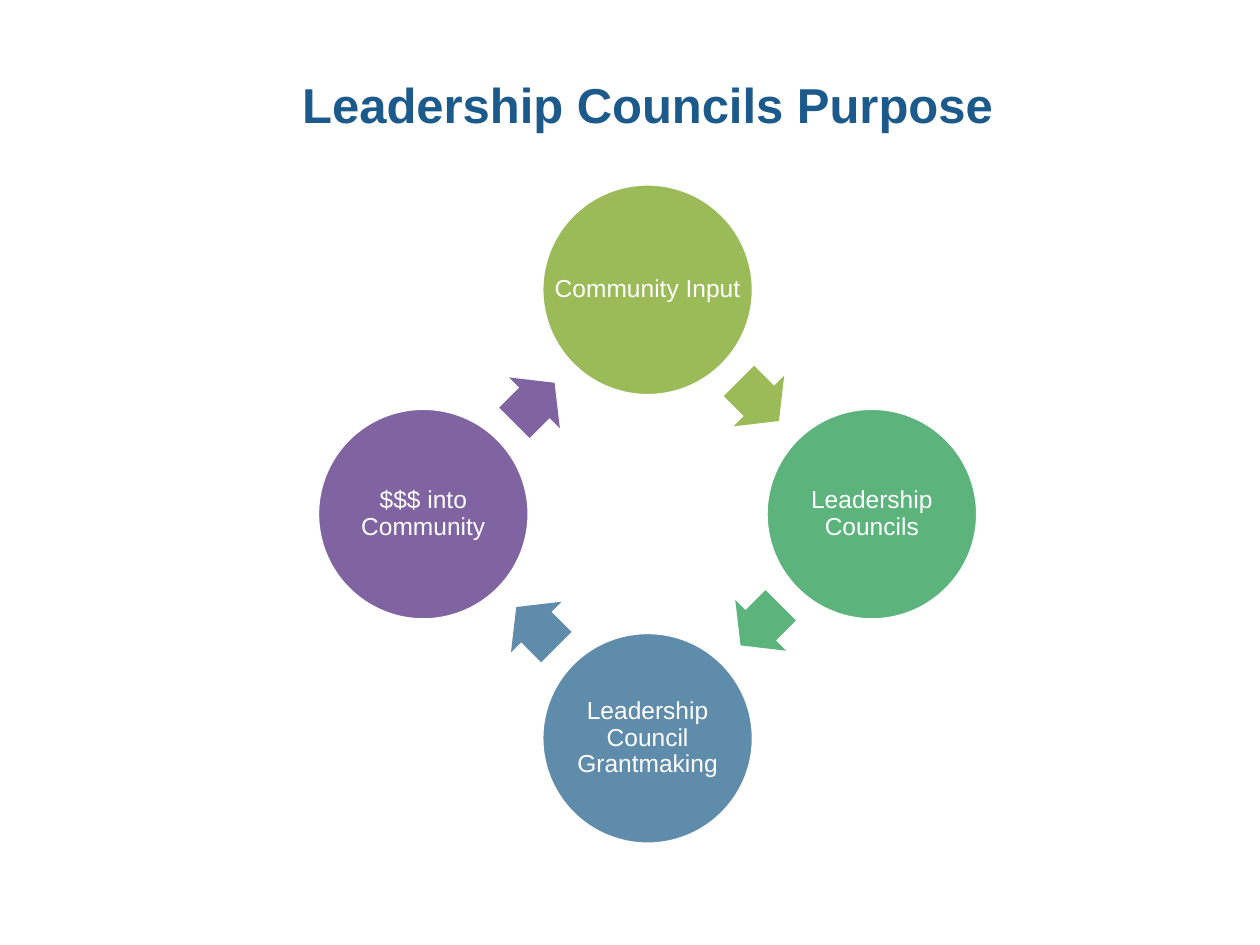
import math

from pptx import Presentation
from pptx.dml.color import RGBColor
from pptx.enum.shapes import MSO_SHAPE
from pptx.enum.text import MSO_ANCHOR, PP_ALIGN
from pptx.util import Pt

OVAL = MSO_SHAPE.OVAL
RIGHT_ARROW = MSO_SHAPE.RIGHT_ARROW
MIDDLE = MSO_ANCHOR.MIDDLE
CENTER = PP_ALIGN.CENTER

FONT = "Arial"
WHITE = RGBColor(0xFF, 0xFF, 0xFF)
TITLE_BLUE = RGBColor(0x1C, 0x5A, 0x8C)
GREEN = RGBColor(0x9B, 0xBB, 0x59)
TEAL = RGBColor(0x5C, 0xB3, 0x7C)
BLUE = RGBColor(0x60, 0x8C, 0xAB)
PURPLE = RGBColor(0x80, 0x64, 0xA2)

TITLE_ONLY = 5
STEPS = [
    ("Community Input", GREEN),
    ("Leadership Councils", TEAL),
    ("Leadership Council Grantmaking", BLUE),
    ("$$$ into Community", PURPLE),
]
CIRCLE_SIZE = 121
ARROW_LENGTH, ARROW_WIDTH = 32.4, 41
ARROW_SETBACK = 0.7


def centered_box(x, y, width, height):
    """Return left, top, width and height of a box around a centre point."""
    return Pt(x - width / 2), Pt(y - height / 2), Pt(width), Pt(height)


def style_text(frame, size, color, bold=False):
    frame.word_wrap = True
    frame.vertical_anchor = MIDDLE
    for para in frame.paragraphs:
        para.alignment = CENTER
        for span in para.runs:
            span.font.name = FONT
            span.font.size = Pt(size)
            span.font.bold = bold
            span.font.color.rgb = color


def add_title(page, text, left, top, width, height):
    title = page.shapes.title
    title.left, title.top = Pt(left), Pt(top)
    title.width, title.height = Pt(width), Pt(height)
    title.text_frame.text = text
    style_text(title.text_frame, 28, TITLE_BLUE, bold=True)


def add_filled_shape(page, kind, bounds, color):
    shape = page.shapes.add_shape(kind, *bounds)
    shape.shadow.inherit = False
    shape.fill.solid()
    shape.fill.fore_color.rgb = color
    return shape


def add_circle(page, x, y, label, color):
    """Draw a circle and a label that may use its full width."""
    bounds = centered_box(x, y, CIRCLE_SIZE, CIRCLE_SIZE)
    circle = add_filled_shape(page, OVAL, bounds, color)
    circle.line.color.rgb = WHITE
    circle.line.width = Pt(2)

    box = page.shapes.add_textbox(*bounds)
    frame = box.text_frame
    frame.margin_left = frame.margin_right = Pt(1.4)
    frame.margin_top = frame.margin_bottom = Pt(1.4)
    frame.text = label
    style_text(frame, 14, WHITE)
    frame.paragraphs[0].line_spacing = 0.9


def add_arrow(page, x, y, rotation, color):
    bounds = centered_box(x, y, ARROW_LENGTH, ARROW_WIDTH)
    arrow = add_filled_shape(page, RIGHT_ARROW, bounds, color)
    arrow.line.fill.background()
    arrow.adjustments[0] = 0.6
    arrow.adjustments[1] = 0.5
    arrow.rotation = rotation


def add_cycle(page, left, top, size):
    """Place the steps clockwise from the top, each followed by an arrow."""
    orbit = (size - CIRCLE_SIZE) / 2
    center_x, center_y = left + size / 2, top + size / 2
    turn = 360 / len(STEPS)
    arrow_orbit = orbit * math.cos(math.radians(turn / 2))
    for index, (label, color) in enumerate(STEPS):
        angle = math.radians(index * turn - 90)
        add_circle(page, center_x + orbit * math.cos(angle),
                   center_y + orbit * math.sin(angle), label, color)

        rotation = (index + 0.5) * turn
        heading = math.radians(rotation)
        arrow_x = arrow_orbit * math.sin(heading) - ARROW_SETBACK * math.cos(heading)
        arrow_y = -arrow_orbit * math.cos(heading) - ARROW_SETBACK * math.sin(heading)
        add_arrow(page, center_x + arrow_x, center_y + arrow_y, rotation, color)


def main():
    deck = Presentation()
    deck.slide_width, deck.slide_height = Pt(720), Pt(540)
    page = deck.slides.add_slide(deck.slide_layouts[TITLE_ONLY])
    add_title(page, "Leadership Councils Purpose", 46, 36.7, 648, 45.4)
    add_cycle(page, 181.4, 105.1, 377.3)
    deck.save("out.pptx")


if __name__ == "__main__":
    main()
